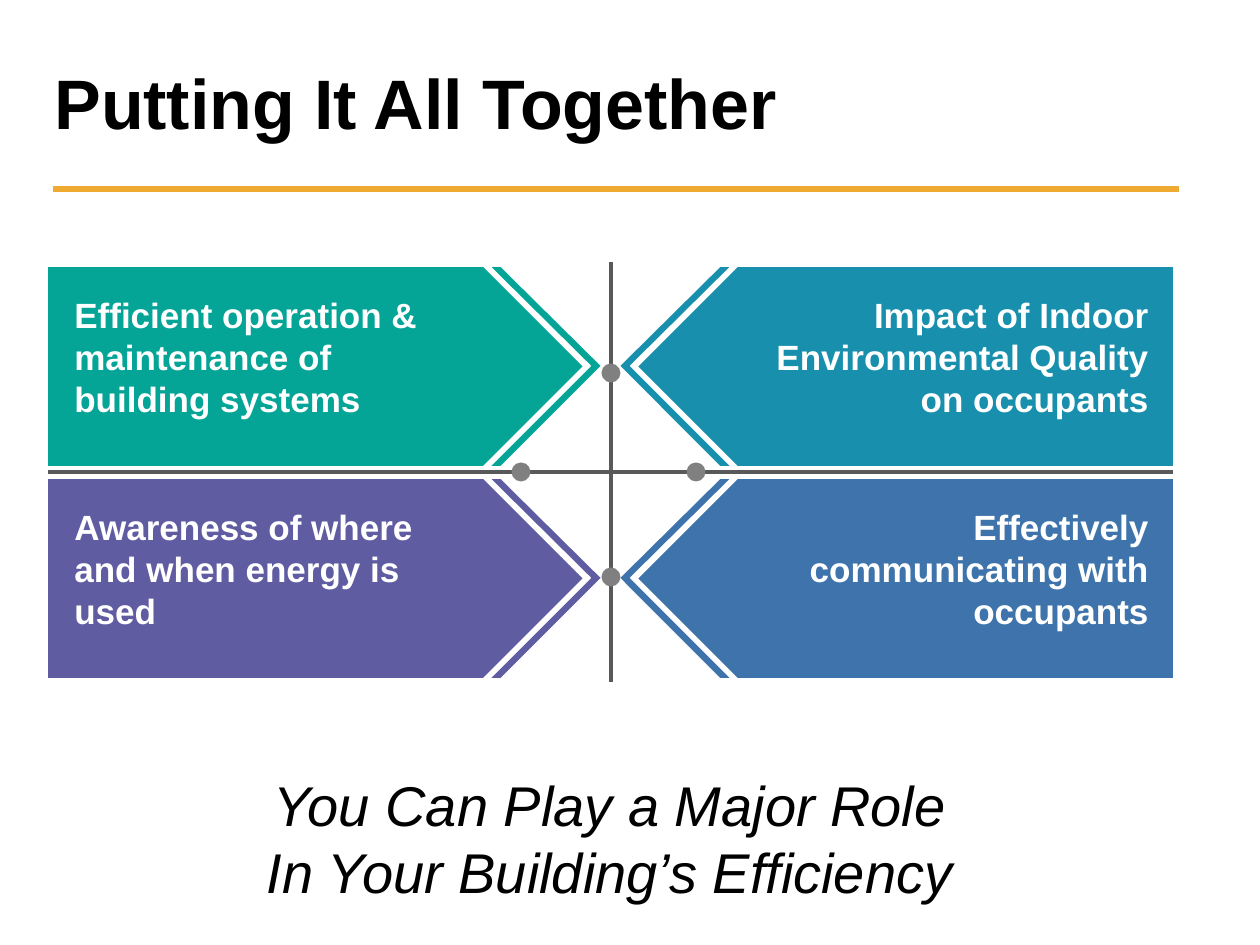
"""Build the "Putting It All Together" slide with four facing arrow panels."""
from pptx import Presentation
from pptx.dml.color import RGBColor
from pptx.enum.shapes import MSO_CONNECTOR, MSO_SHAPE
from pptx.enum.text import MSO_ANCHOR, PP_ALIGN
from pptx.oxml.ns import qn
from pptx.util import Emu, Pt
from lxml import etree

PX = 914400 / 126
COLORS = {
    "gold": "EFAB31", "teal": "04A597", "purple": "5F5CA2", "cyan": "1890AD",
    "blue": "3E74AB", "axis": "595959", "dot": "808080",
    "white": "FFFFFF", "black": "000000",
}


def px(*values):
    return [Emu(round(v * PX)) for v in values]


def add_text(box, lines, size, color, align=PP_ALIGN.LEFT, bold=False, italic=False):
    s = slide.shapes.add_textbox(*px(*box))
    tf = s.text_frame
    tf.word_wrap = True
    p = tf.paragraphs[0]
    p.alignment = align
    for i, line in enumerate(lines):
        if i:
            p.add_line_break()
        r = p.add_run()
        r.text = line
        r.font.name, r.font.size = "Arial", Pt(size)
        r.font.bold, r.font.italic = bold, italic
        r.font.color.rgb = RGBColor.from_string(COLORS[color])
    return tf


prs = Presentation()
prs.slide_width, prs.slide_height = px(1260, 945)
slide = prs.slides.add_slide(prs.slide_layouts[6])

tf = add_text((42, 34, 914, 136), ["Putting It All Together"], 40, "black", bold=True)
tf.vertical_anchor = MSO_ANCHOR.MIDDLE

TOPS, HEIGHT, MIRROR = (266, 478), 201, 1221
PLATE_LEFT, PLATE_WIDTH = 47, 537
panels = [
    (0, False, "teal", "Efficient operation & maintenance of building systems"),
    (1, False, "purple", "Awareness of where and when energy is used"),
    (0, True, "cyan", "Impact of Indoor Environmental Quality on occupants"),
    (1, True, "blue", "Effectively communicating with occupants"),
]
for row, flipped, color, text in panels:
    top = TOPS[row]
    mid, bottom = top + HEIGHT / 2, top + HEIGHT
    points = [(489, top), (501, top), (602, mid), (501, bottom), (489, bottom), (590, mid)]
    if flipped:
        points = [(MIRROR - x, y) for x, y in points]
    fb = slide.shapes.build_freeform(*points[0], scale=PX)
    fb.add_line_segments(points[1:], close=True)
    chevron = fb.convert_to_shape()

    left = MIRROR - PLATE_LEFT - PLATE_WIDTH if flipped else PLATE_LEFT
    plate = slide.shapes.add_shape(
        MSO_SHAPE.PENTAGON, *px(left, top, PLATE_WIDTH, HEIGHT))
    plate.rotation = 180 if flipped else 0
    for s in (chevron, plate):
        s.shadow.inherit = False
        s.fill.solid()
        s.fill.fore_color.rgb = RGBColor.from_string(COLORS[color])
        s.line.color.rgb = RGBColor.from_string(COLORS["white"])
        s.line.width = Pt(1)

    x, width, align = (741, 420, PP_ALIGN.RIGHT) if flipped else (62, 426, PP_ALIGN.LEFT)
    add_text((x, top + 21, width, 140), [text], 20, "white", align, bold=True)

lines = [
    (53, 189, 1179, 189, "gold", 4),
    (611, 262, 611, 682, "axis", 2),
    (48, 472, 1173, 472, "axis", 2),
]
for x1, y1, x2, y2, color, weight in lines:
    s = slide.shapes.add_connector(MSO_CONNECTOR.STRAIGHT, *px(x1, y1, x2, y2))
    s.line.color.rgb = RGBColor.from_string(COLORS[color])
    s.line.width = Pt(weight)
    etree.SubElement(s._element.spPr, qn("a:effectLst"))

DOT = 19
for x, y in [(611, 373), (611, 577), (696, 472), (521, 472)]:
    s = slide.shapes.add_shape(MSO_SHAPE.OVAL, *px(x - DOT / 2, y - DOT / 2, DOT, DOT))
    s.shadow.inherit = False
    s.fill.solid()
    s.fill.fore_color.rgb = RGBColor.from_string(COLORS["dot"])
    s.line.fill.background()

add_text((47, 764, 1126, 149),
         ["You Can Play a Major Role", "In Your Building’s Efficiency"],
         32, "black", PP_ALIGN.CENTER, italic=True)

prs.save("out.pptx")
